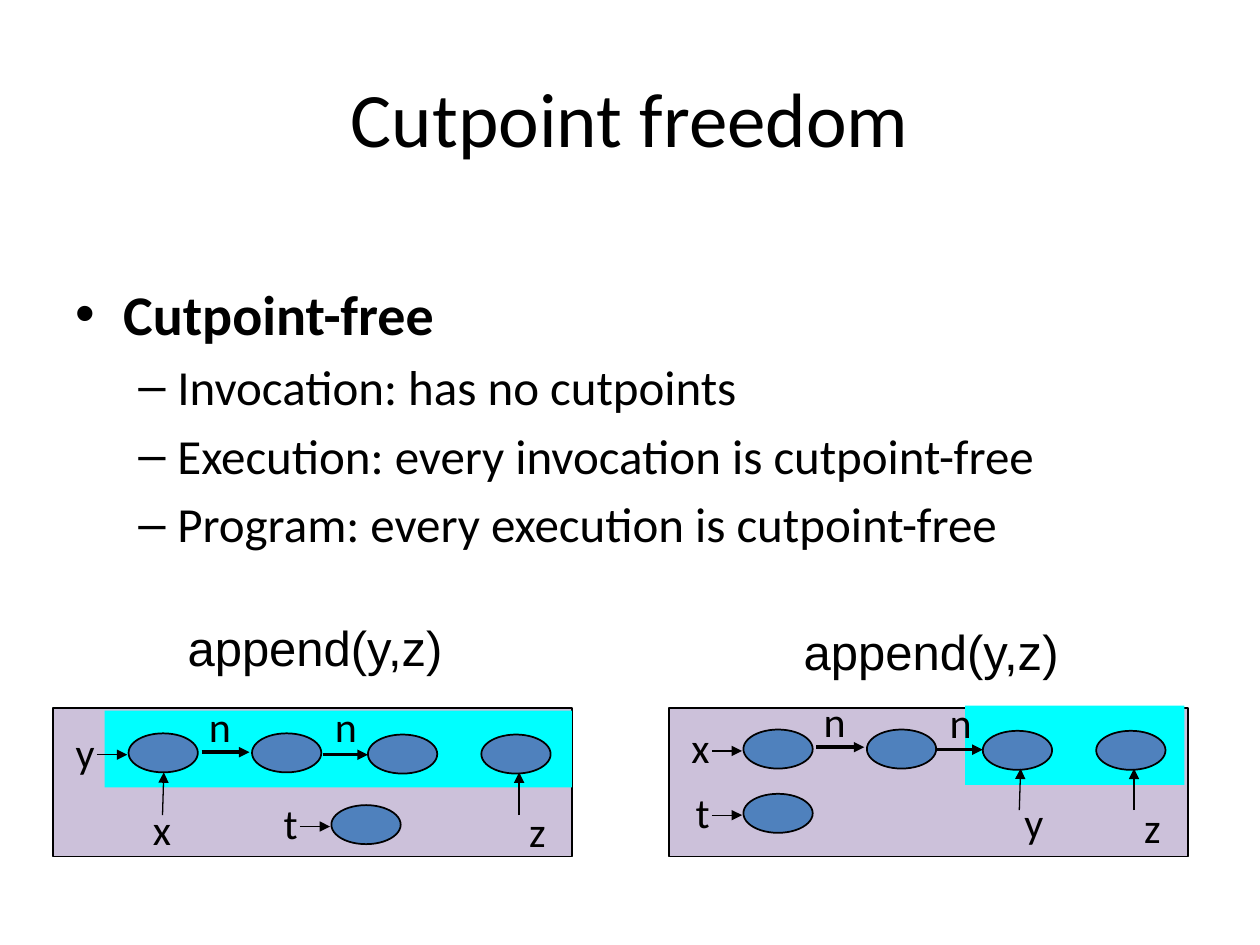
from lxml import etree
from pptx import Presentation
from pptx import util as u
from pptx.dml.color import RGBColor
from pptx.enum import shapes, text
from pptx.oxml import ns

BLACK, LILAC, CYAN, BLUE = "000000", "CCC1DA", "00FFFF", "4F81BD"
LEFT, MID = text.PP_ALIGN.LEFT, text.PP_ALIGN.CENTER
RIGHT = text.PP_ALIGN.RIGHT
RECT, OVAL = shapes.MSO_SHAPE.RECTANGLE, shapes.MSO_SHAPE.OVAL

deck = Presentation()
deck.slide_width, deck.slide_height = u.Inches(10), u.Inches(7.5)
slide = deck.slides.add_slide(deck.slide_layouts[6])
items = slide.shapes


def paint(form, color):
    """Set a fill, line or font colour from a hex string."""
    if hasattr(form, "solid"):
        form.solid()
        form.fore_color.rgb = RGBColor.from_string(color)
    else:
        form.color.rgb = RGBColor.from_string(color)


def write(box, rows, align, anchor=text.MSO_ANCHOR.TOP):
    """Add a text box; each row is its words and a dict of font values."""
    frame = items.add_textbox(*map(u.Inches, box)).text_frame
    frame.word_wrap, frame.vertical_anchor = True, anchor
    for i, (words, look) in enumerate(rows):
        para = frame.add_paragraph() if i else frame.paragraphs[0]
        para.alignment = align
        run = para.add_run()
        run.text = words
        paint(run.font, BLACK)
        for key, val in look.items():
            setattr(run.font, key, val)
    return frame


# Heap frames, argument areas and list nodes: kind, fill, line width, boxes
node = (0.55, 0.31)
spots = [(6.88, 5.79), (7.8, 5.8), (5.9, 5.79), (5.9, 6.3), (8.7, 5.8),
         (2, 5.82), (2.92, 5.83), (1.02, 5.82), (2.63, 6.39), (3.82, 5.83)]
groups = [
    (RECT, LILAC, 0.75, [(x, 5.62, 4.12, 1.18) for x in (0.42, 5.31)]),
    (RECT, CYAN, 0, [(7.66, 5.6, 1.74, 0.63), (0.83, 5.64, 3.71, 0.61)]),
    (OVAL, BLUE, 1, [spot + node for spot in spots]),
]
for kind, fill, width, boxes in groups:
    for box in boxes:
        shape = items.add_shape(kind, *map(u.Inches, box))
        shape.shadow.inherit = False
        paint(shape.fill, fill)
        if width:
            paint(shape.line, BLACK)
            shape.line.width = u.Pt(width)
        else:
            shape.line.fill.background()

# Variable pointers are thin, next-field links are thick
arrows = {
    0.75: [(5.65, 5.96, 5.89, 5.96), (5.65, 6.47, 5.89, 6.47),
           (0.77, 5.99, 1.01, 5.99), (2.38, 6.56, 2.62, 6.56),
           (8.09, 6.43, 8.1, 6.1), (9, 6.43, 9, 6.1),
           (4.12, 6.47, 4.12, 6.13), (1.29, 6.47, 1.3, 6.13)],
    2: [(6.48, 5.93, 6.86, 5.93), (7.44, 5.95, 7.8, 5.95),
        (1.6, 5.97, 1.98, 5.97), (2.56, 5.99, 2.92, 5.99)],
}
for width, ends in arrows.items():
    for end in ends:
        arrow = items.add_connector(shapes.MSO_CONNECTOR.STRAIGHT,
                                    *map(u.Inches, end))
        paint(arrow.line, BLACK)
        arrow.line.width = u.Pt(width)
        props = arrow.line._get_or_add_ln()
        etree.SubElement(props, ns.qn("a:tailEnd"), type="triangle")
        etree.SubElement(arrow._element.spPr, ns.qn("a:effectLst"))

# Names of variables and fields
small = {"name": "Calibri", "size": u.Pt(24)}
labels = [
    ("x", 5.32, 5.68, 0.41, RIGHT), ("t", 5.32, 6.19, 0.41, RIGHT),
    ("y", 7.91, 6.27, 0.47, RIGHT), ("z", 8.84, 6.31, 0.47, RIGHT),
    ("n", 6.38, 5.47, 0.49, MID), ("n", 7.38, 5.48, 0.49, MID),
    ("y", 0.44, 5.72, 0.41, RIGHT), ("t", 2.05, 6.28, 0.41, RIGHT),
    ("z", 3.96, 6.34, 0.47, RIGHT), ("x", 1.04, 6.33, 0.49, MID),
    ("n", 1.5, 5.51, 0.49, MID), ("n", 2.5, 5.51, 0.49, MID),
]
for name, x, y, width, align in labels:
    write((x, y, width, 0.5), [(name, small)], align)

call = {"name": "Arial", "size": u.Pt(28)}
for x, y in [(0.9, 4.85), (5.79, 4.88)]:
    write((x, y, 3.2, 0.57), [("append(y,z)", call)], MID)

# Title and bullets
head = {"name": "Calibri", "size": u.Pt(44)}
write((0.5, 0.3, 9, 1.25), [("Cutpoint freedom", head)], MID,
      text.MSO_ANCHOR.MIDDLE)

top = {"name": "Calibri", "size": u.Pt(32), "bold": True}
sub = {"name": "Calibri", "size": u.Pt(28)}
body = write((0.5, 2.17, 9.16, 4.93), [
    ("Cutpoint-free", top),
    ("Invocation: has no cutpoints", sub),
    ("Execution: every invocation is cutpoint-free", sub),
    ("Program: every execution is cutpoint-free", sub),
], LEFT)
for i, para in enumerate(body.paragraphs):
    mark, margin, hang = ("–", 0.81, 0.31) if i else ("•", 0.38, 0.38)
    para.level = min(i, 1)
    para.space_before = u.Pt(5.6 if i else 0)
    props = para._p.get_or_add_pPr()
    props.set("marL", str(u.Inches(margin)))
    props.set("indent", str(-u.Inches(hang)))
    etree.SubElement(props, ns.qn("a:buFont"), typeface="Arial")
    etree.SubElement(props, ns.qn("a:buChar"), char=mark)

deck.save("out.pptx")
